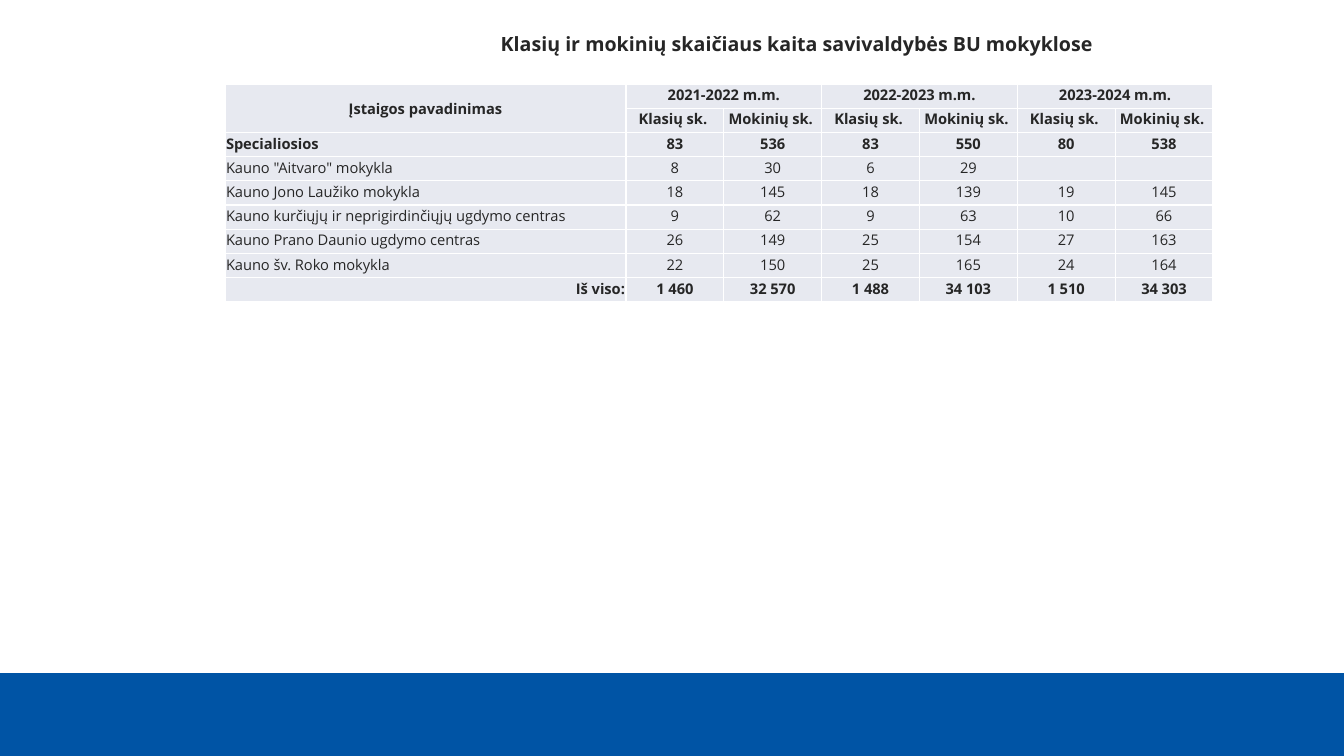
import pptx
import pptx.util
import pptx.dml.color
import pptx.enum.shapes
import pptx.enum.text
import lxml.etree

RGB = pptx.dml.color.RGBColor
BLUE = RGB(0x00, 0x54, 0xA5)
PALE = RGB(0xE7, 0xE9, 0xF0)
INK = RGB(0x26, 0x26, 0x26)
WHITE = RGB(0xFF, 0xFF, 0xFF)
FACE = "Open Sans"
SCALE = 12192000 / 1344
ALIGN = pptx.enum.text.PP_ALIGN
ANCHOR = pptx.enum.text.MSO_ANCHOR
NS = "{http://schemas.openxmlformats.org/drawingml/2006/main}"

YEARS = ["2021-2022 m.m.", "2022-2023 m.m.", "2023-2024 m.m."]
SCHOOLS = [
    ["Specialiosios", "83", "536", "83", "550", "80", "538"],
    ['Kauno "Aitvaro" mokykla', "8", "30", "6", "29", "", ""],
    ["Kauno Jono Laužiko mokykla", "18", "145", "18", "139", "19", "145"],
    ["Kauno kurčiųjų ir neprigirdinčiųjų ugdymo centras", "9", "62", "9", "63", "10", "66"],
    ["Kauno Prano Daunio ugdymo centras", "26", "149", "25", "154", "27", "163"],
    ["Kauno šv. Roko mokykla", "22", "150", "25", "165", "24", "164"],
    ["Iš viso:", "1 460", "32 570", "1 488", "34 103", "1 510", "34 303"],
]


def px(count):
    return pptx.util.Emu(round(count * SCALE))


def style(font, size, bold):
    font.name = FACE
    font.size = pptx.util.Pt(size)
    font.bold = bold
    font.color.rgb = INK


def edge(cell):
    props = cell._tc.get_or_add_tcPr()
    for side in ("lnL", "lnR", "lnT", "lnB"):
        line = lxml.etree.SubElement(props, NS + side, w="12700")
        fill = lxml.etree.SubElement(line, NS + "solidFill")
        lxml.etree.SubElement(fill, NS + "srgbClr", val=str(WHITE))


def put(cell, text, align, bold):
    cell.text_frame.text = text
    para = cell.text_frame.paragraphs[0]
    para.alignment = align
    for run in para.runs:
        style(run.font, 10.5, bold)
    if not text:
        lxml.etree.SubElement(para._p, NS + "endParaRPr", sz="1050")


def draw_band(slide, left, top, width, height):
    band = slide.shapes.add_shape(
        pptx.enum.shapes.MSO_SHAPE.RECTANGLE, px(left), px(top), px(width), px(height))
    band.shadow.inherit = False
    band.fill.solid()
    band.fill.fore_color.rgb = BLUE
    band.line.fill.background()


def draw_title(slide, left, top, width, height):
    title = slide.shapes.title
    title.left, title.top, title.width, title.height = map(px, (left, top, width, height))
    frame = title.text_frame
    frame.text = "Klasių ir mokinių skaičiaus kaita savivaldybės BU mokyklose"
    frame.word_wrap = False
    frame.auto_size = pptx.enum.text.MSO_AUTO_SIZE.SHAPE_TO_FIT_TEXT
    frame.vertical_anchor = ANCHOR.TOP
    para = frame.paragraphs[0]
    para.alignment = ALIGN.CENTER
    style(para.runs[0].font, 14, True)


def draw_table(slide, left, top, width, height):
    heads = [["Įstaigos pavadinimas"], [""]]
    for year in YEARS:
        heads[0] += [year, ""]
        heads[1] += ["Klasių sk. ", "Mokinių sk. "]
    rows = heads + SCHOOLS
    table = slide.shapes.add_table(
        len(rows), len(rows[0]), px(left), px(top), px(width), px(height)).table
    table.first_row = False
    table.horz_banding = False
    first = 401
    for index, col in enumerate(table.columns):
        col.width = px((width - first) / (len(rows[0]) - 1) if index else first)
    for row in table.rows:
        row.height = px(height / len(rows))
    last = len(rows) - 1
    for r, row in enumerate(rows):
        for c, text in enumerate(row):
            cell = table.cell(r, c)
            cell.margin_left = cell.margin_right = cell.margin_top = px(1)
            cell.margin_bottom = 0
            edge(cell)
            cell.fill.solid()
            cell.fill.fore_color.rgb = PALE
            align = ALIGN.CENTER
            if c == 0 and r > 1:
                align = ALIGN.RIGHT if r == last else ALIGN.LEFT
            put(cell, text, align, r < 3 or r == last)
    table.cell(0, 0).merge(table.cell(1, 0))
    table.cell(0, 0).vertical_anchor = ANCHOR.MIDDLE
    for c in range(1, len(rows[0]), 2):
        table.cell(0, c).merge(table.cell(0, c + 1))


def main():
    deck = pptx.Presentation()
    deck.slide_width, deck.slide_height = px(1344), px(756)
    slide = deck.slides.add_slide(deck.slide_layouts[5])
    slide.background.fill.solid()
    slide.background.fill.fore_color.rgb = WHITE
    draw_band(slide, 0, 673, 1344, 83)
    draw_table(slide, 225, 84, 988, 218)
    draw_title(slide, 488, 27, 618, 34)
    deck.save("out.pptx")


if __name__ == "__main__":
    main()
